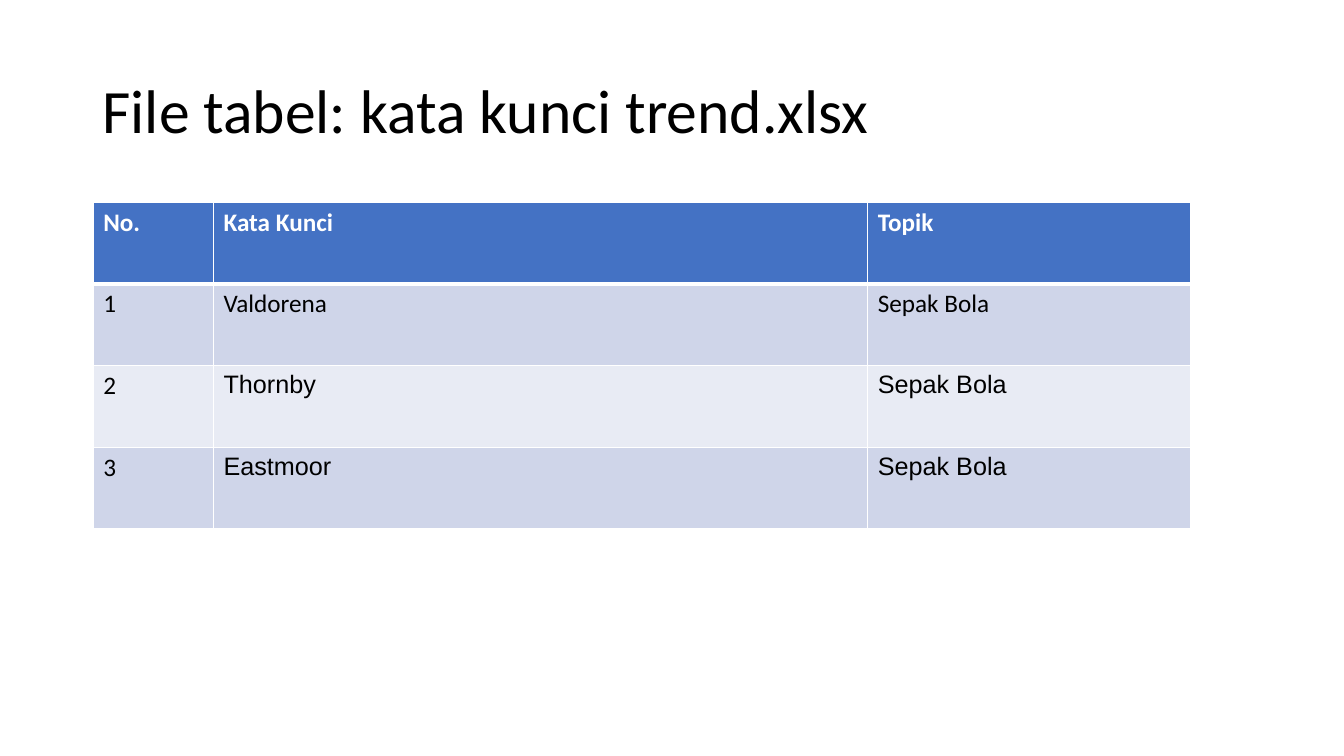
import pptx
import pptx.dml.color
import pptx.enum.text
import pptx.oxml
import pptx.oxml.ns
import pptx.util

Cm = pptx.util.Cm
Pt = pptx.util.Pt

COLORS = {
    "text": "000000",
    "white": "FFFFFF",
    "header": "4472C4",
    "odd": "CFD5E9",
    "even": "E8EBF4",
}


def write(frame, text, size=18, font="Calibri", color="text", bold=False, spacing=1.0):
    """Fill a text frame with one left-aligned, formatted paragraph."""
    paragraph = frame.paragraphs[0]
    paragraph.alignment = pptx.enum.text.PP_ALIGN.LEFT
    paragraph.line_spacing = spacing
    run = paragraph.add_run()
    run.text = text
    run.font.size = Pt(size)
    run.font.name = font
    run.font.bold = bold
    run.font.color.rgb = pptx.dml.color.RGBColor.from_string(COLORS[color])


def set_borders(cell, widths):
    """Draw white cell borders; widths maps a side (L, R, T, B) to points."""
    properties = cell._tc.get_or_add_tcPr()
    for position, (side, width) in enumerate(widths.items()):
        line = pptx.oxml.parse_xml(
            f'<a:ln{side} {pptx.oxml.ns.nsdecls("a")} w="{Pt(width)}">'
            f'<a:solidFill><a:srgbClr val="{COLORS["white"]}"/></a:solidFill></a:ln{side}>'
        )
        properties.insert(position, line)


presentation = pptx.Presentation()
presentation.slide_width = Cm(33.87)
presentation.slide_height = Cm(19.05)
slide = presentation.slides.add_slide(presentation.slide_layouts[5])

title = slide.shapes.title
title.left, title.top, title.width, title.height = Cm(2.33), Cm(1.01), Cm(29.21), Cm(3.68)
title.text_frame.vertical_anchor = pptx.enum.text.MSO_ANCHOR.MIDDLE
title.text_frame.word_wrap = True
write(title.text_frame, "File tabel: kata kunci trend.xlsx", size=44, spacing=0.9)

keywords = [
    ("No.", "Kata Kunci", "Topik"),
    ("1", "Valdorena", "Sepak Bola"),
    ("2", "Thornby", "Sepak Bola"),
    ("3", "Eastmoor", "Sepak Bola"),
]
column_widths = [3.03, 16.49, 8.13]
row_height = 2.06

keyword_table = slide.shapes.add_table(
    len(keywords), len(column_widths),
    Cm(2.35), Cm(5.09), Cm(sum(column_widths)), Cm(row_height * len(keywords)),
).table
for column, width in zip(keyword_table.columns, column_widths):
    column.width = Cm(width)

for row, entries in enumerate(keywords):
    keyword_table.rows[row].height = Cm(row_height)
    is_header = row == 0
    band = "header" if is_header else "odd" if row % 2 else "even"
    for column, entry in enumerate(entries):
        cell = keyword_table.cell(row, column)
        cell.fill.solid()
        cell.fill.fore_color.rgb = pptx.dml.color.RGBColor.from_string(COLORS[band])
        set_borders(cell, {
            "L": 0.96,
            "R": 0.96,
            "T": 3 if row == 1 else 0.96,
            "B": 3 if is_header else 0.96,
        })
        write(
            cell.text_frame, entry,
            font="Arial" if row >= 2 and column >= 1 else "Calibri",
            color="white" if is_header else "text",
            bold=is_header,
        )

presentation.save("out.pptx")
